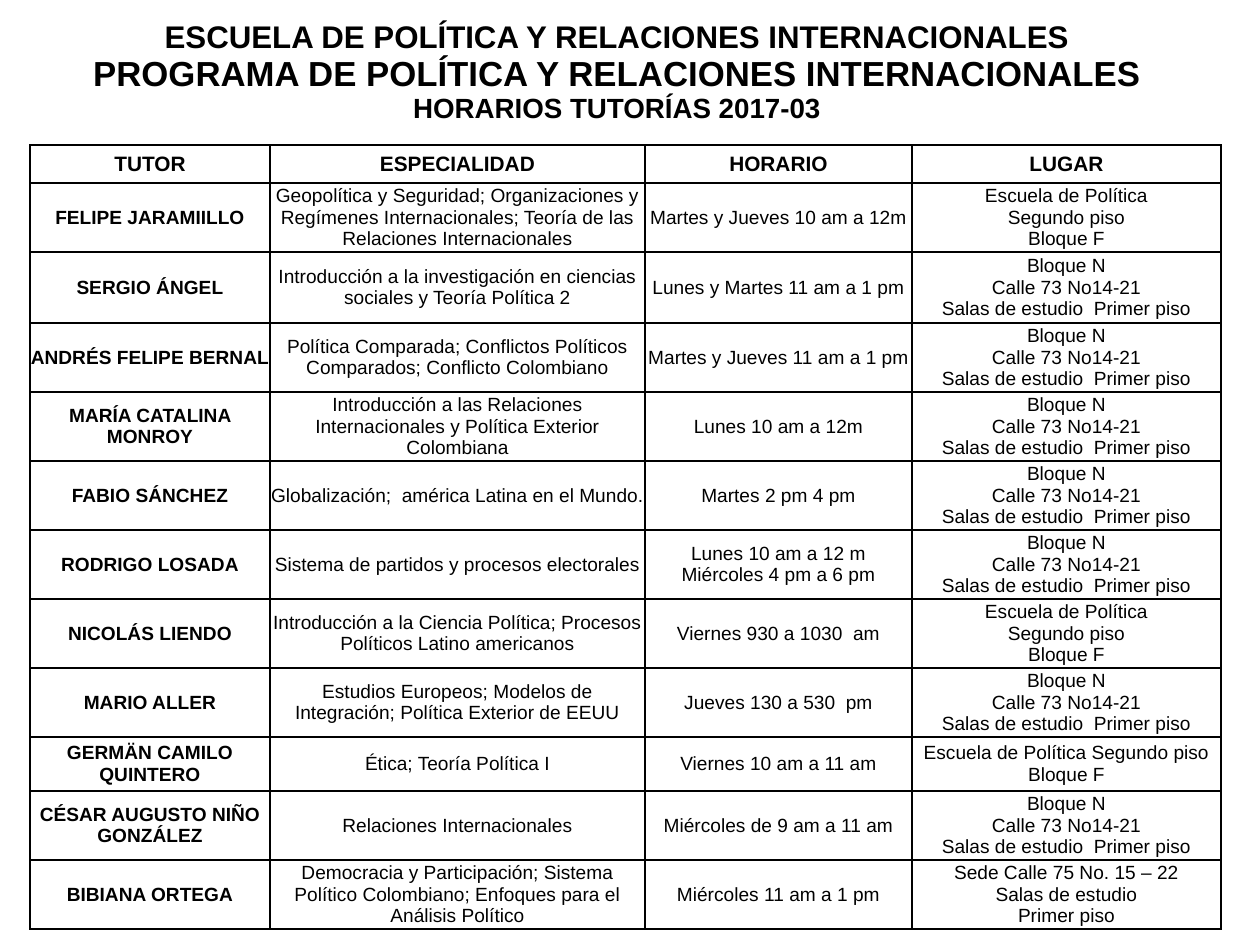
from dataclasses import dataclass

import pptx
import pptx.dml.color
import pptx.enum.text
import pptx.oxml
import pptx.oxml.ns
import pptx.table
import pptx.util


@dataclass(frozen=True)
class Theme:
    font: str = "Arial"
    ink: str = "000000"
    rule: float = 1
    head: int = 12
    body: int = 11


@dataclass(frozen=True)
class Line:
    text: str
    size: int
    bold: bool = False


@dataclass(frozen=True)
class Tutor:
    name: str
    field: str
    hours: str
    place: str
    high: int = 69


THEME = Theme()
LEFT, TOP = 30, 16
COLS = [240, 375, 267, 309]
TITLE_HIGH, HEAD_HIGH = 129, 38
TITLE_PAD = 17

TITLE = [
    Line("ESCUELA DE POLÍTICA Y RELACIONES INTERNACIONALES", 18, True),
    Line("PROGRAMA DE POLÍTICA Y RELACIONES INTERNACIONALES", 20, True),
    Line("HORARIOS TUTORÍAS 2017-03", 16, True),
]
HEADS = ["TUTOR", "ESPECIALIDAD", "HORARIO", "LUGAR"]

NORTH = "Bloque N\nCalle 73 No14-21\nSalas de estudio  Primer piso"
SCHOOL = "Escuela de Política\nSegundo piso\nBloque F"

TUTORS = [
    Tutor("FELIPE JARAMIILLO",
          "Geopolítica y Seguridad; Organizaciones y Regímenes Internacionales; "
          "Teoría de las Relaciones Internacionales",
          "Martes y Jueves 10 am a 12m", SCHOOL),
    Tutor("SERGIO ÁNGEL",
          "Introducción a la investigación en ciencias sociales y Teoría Política 2",
          "Lunes y Martes 11 am a 1 pm", NORTH, 71),
    Tutor("ANDRÉS FELIPE BERNAL",
          "Política Comparada; Conflictos Políticos Comparados; Conflicto Colombiano",
          "Martes y Jueves 11 am a 1 pm", NORTH),
    Tutor("MARÍA CATALINA MONROY",
          "Introducción a las Relaciones Internacionales y Política Exterior Colombiana",
          "Lunes 10 am a 12m", NORTH),
    Tutor("FABIO SÁNCHEZ", "Globalización;  américa Latina en el Mundo.",
          "Martes 2 pm 4 pm", NORTH),
    Tutor("RODRIGO LOSADA", "Sistema de partidos y procesos electorales",
          "Lunes 10 am a 12 m\nMiércoles 4 pm a 6 pm", NORTH),
    Tutor("NICOLÁS LIENDO",
          "Introducción a la Ciencia Política; Procesos Políticos Latino americanos",
          "Viernes 930 a 1030  am", SCHOOL),
    Tutor("MARIO ALLER",
          "Estudios Europeos; Modelos de Integración; Política Exterior de EEUU",
          "Jueves 130 a 530  pm", NORTH),
    Tutor("GERMÄN CAMILO QUINTERO", "Ética; Teoría Política I",
          "Viernes 10 am a 11 am", "Escuela de Política Segundo piso Bloque F", 54),
    Tutor("CÉSAR AUGUSTO NIÑO GONZÁLEZ", "Relaciones Internacionales",
          "Miércoles de 9 am a 11 am", NORTH),
    Tutor("BIBIANA ORTEGA",
          "Democracia y Participación; Sistema Político Colombiano; "
          "Enfoques para el Análisis Político",
          "Miércoles 11 am a 1 pm",
          "Sede Calle 75 No. 15 – 22\nSalas de estudio\nPrimer piso"),
]


def px(count: int) -> pptx.util.Emu:
    return pptx.util.Emu(round(count * 914400 / 125))


def lines(text: str, size: int, bold: bool) -> list[Line]:
    return [Line(part, size, bold) for part in text.split("\n")]


def border(cell: pptx.table._Cell, sides: str) -> None:
    """Rule the given sides, named by the letters L, R, T and B."""
    props = cell._tc.get_or_add_tcPr()
    for spot, side in enumerate(sides):
        props.insert(spot, pptx.oxml.parse_xml(
            f'<a:ln{side} {pptx.oxml.ns.nsdecls("a")} w="{pptx.util.Pt(THEME.rule)}">'
            f'<a:solidFill><a:srgbClr val="{THEME.ink}"/></a:solidFill></a:ln{side}>'))


def write(cell: pptx.table._Cell, rows: list[Line], sides: str) -> None:
    cell.margin_left = cell.margin_right = cell.margin_top = cell.margin_bottom = 0
    cell.vertical_anchor = pptx.enum.text.MSO_ANCHOR.MIDDLE
    cell.fill.background()
    border(cell, sides)
    frame = cell.text_frame
    for spot, line in enumerate(rows):
        para = frame.add_paragraph() if spot else frame.paragraphs[0]
        para.alignment = pptx.enum.text.PP_ALIGN.CENTER
        run = para.add_run()
        run.text = line.text
        run.font.name = THEME.font
        run.font.size = pptx.util.Pt(line.size)
        run.font.bold = line.bold
        run.font.color.rgb = pptx.dml.color.RGBColor.from_string(THEME.ink)


def main() -> None:
    deck = pptx.Presentation()
    deck.slide_width, deck.slide_height = px(1260), px(938)
    slide = deck.slides.add_slide(deck.slide_layouts[6])

    highs = [TITLE_HIGH, HEAD_HIGH] + [tutor.high for tutor in TUTORS]
    table = slide.shapes.add_table(
        len(highs), len(COLS), px(LEFT), px(TOP), px(sum(COLS)), px(sum(highs))).table
    table.first_row = table.horz_banding = False
    for col, wide in zip(table.columns, COLS):
        col.width = px(wide)
    for row, high in zip(table.rows, highs):
        row.height = px(high)

    title = table.cell(0, 0)
    title.merge(table.cell(0, len(COLS) - 1))
    write(title, TITLE, "B")
    title.margin_right = title.margin_bottom = px(TITLE_PAD)

    for col, head in enumerate(HEADS):
        write(table.cell(1, col), lines(head, THEME.head, True), "LRTB")
    for row, tutor in enumerate(TUTORS, start=2):
        texts = [tutor.name, tutor.field, tutor.hours, tutor.place]
        for col, text in enumerate(texts):
            write(table.cell(row, col), lines(text, THEME.body, col == 0), "LRTB")

    deck.save("out.pptx")


if __name__ == "__main__":
    main()
